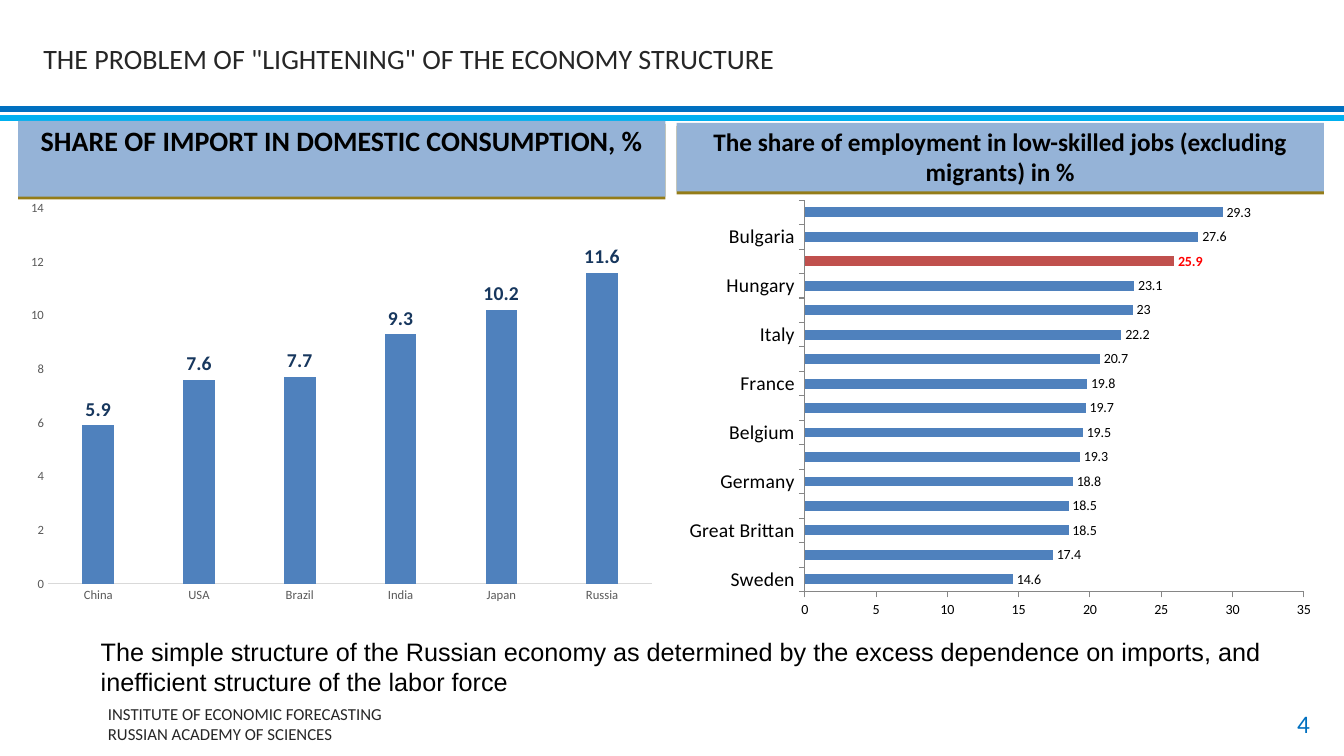
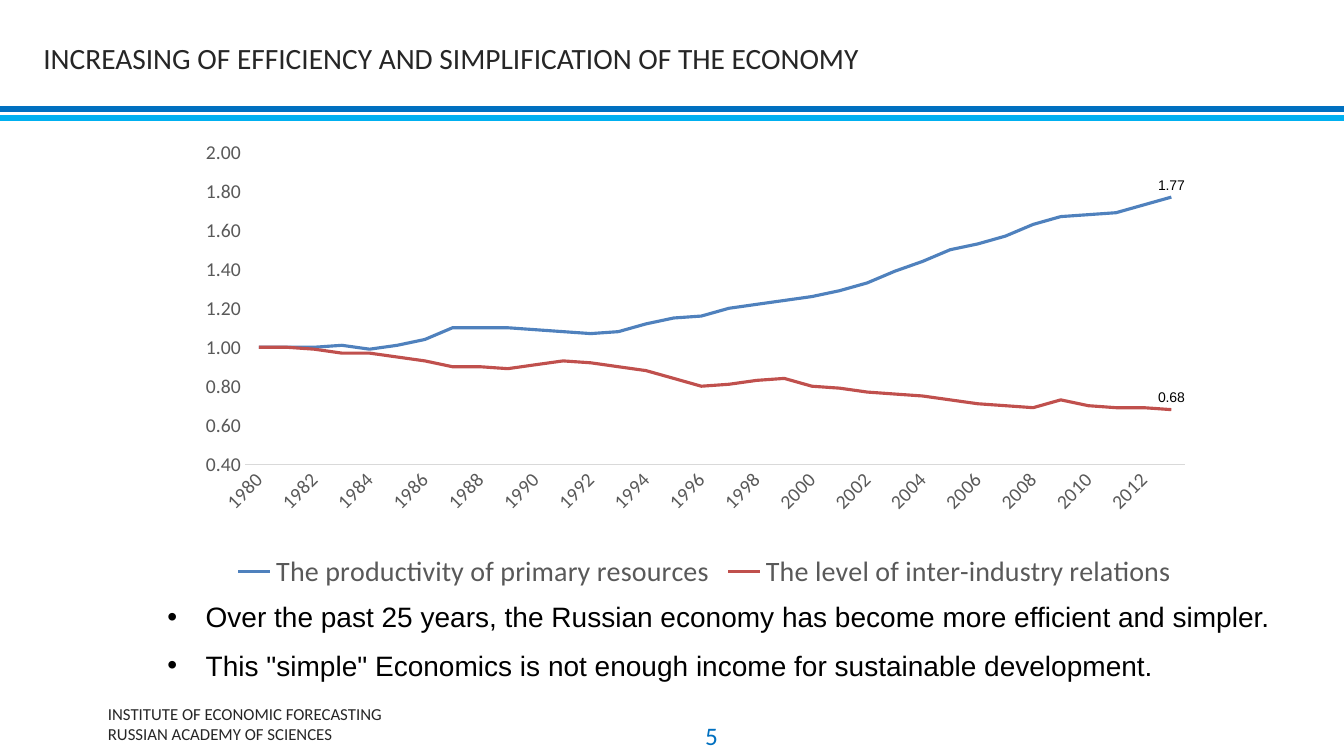
from pptx import Presentation
from pptx.chart.data import CategoryChartData
from pptx.dml.color import RGBColor
from pptx.enum.chart import XL_CHART_TYPE as Chart, XL_LABEL_POSITION as LabelAt
from pptx.enum.chart import XL_LEGEND_POSITION as LegendAt, XL_TICK_MARK as Tick
from pptx.enum.shapes import MSO_CONNECTOR as Connector, MSO_SHAPE as Shape
from pptx.enum.text import MSO_ANCHOR as Anchor, MSO_AUTO_SIZE as AutoSize, PP_ALIGN as Align
from pptx.oxml import parse_xml
from pptx.oxml.ns import nsdecls, qn
from pptx.util import Emu, Pt

# Shared look
PX = 9144  # 100 px to the inch
WIDTH, HEIGHT = 1333, 750
BLACK, INK, GREY, PALE = "000000", "262626", "595959", "D9D9D9"
BLUE, RED, NAVY, HOT = "4F81BD", "C0504D", "17375E", "FF0000"
BAND, GOLD, AXIS, NUMBER = "95B3D7", "947C18", "868686", "0070C0"
RULES = [(108, "0070C0"), (117, "00B0F0")]
FOOTER = ["INSTITUTE OF ECONOMIC FORECASTING", "RUSSIAN ACADEMY OF SCIENCES"]

# Slide 4 content
STRUCTURE_TITLE = 'THE PROBLEM OF "LIGHTENING" OF THE ECONOMY STRUCTURE'
HEADINGS = [
    ("SHARE OF IMPORT IN DOMESTIC CONSUMPTION, %", (18, 120, 642, 75), 20),
    ("The share of employment in low-skilled jobs (excluding migrants) in %",
     (671, 122, 642, 68), 18),
]
IMPORT_SHARE = {"China": 5.9, "USA": 7.6, "Brazil": 7.7, "India": 9.3,
                "Japan": 10.2, "Russia": 11.6}
LOW_SKILLED = {
    "Sweden": 14.6, "Finland": 17.4, "Great Brittan": 18.5, "Czech Rep.": 18.5,
    "Germany": 18.8, "Austria": 19.3, "Belgium": 19.5, "Netherlands": 19.7,
    "France": 19.8, "Poland": 20.7, "Italy": 22.2, "Romania": 23,
    "Hungary": 23.1, "Russia": 25.9, "Bulgaria": 27.6, "Turkey": 29.3,
}
CONCLUSION = ("The simple structure of the Russian economy as determined by the excess "
              "dependence on imports, and inefficient structure of the labor force")

# Slide 5 content
EFFICIENCY_TITLE = "INCREASING OF EFFICIENCY AND SIMPLIFICATION OF THE ECONOMY"
YEARS = [str(year) for year in range(1980, 2014)]
TRENDS = {
    "The productivity of primary resources": [
        1, 1, 1, 1.01, 0.99, 1.01, 1.04, 1.1, 1.1, 1.1, 1.09, 1.08, 1.07, 1.08, 1.12,
        1.15, 1.16, 1.2, 1.22, 1.24, 1.26, 1.29, 1.33, 1.39, 1.44, 1.5, 1.53, 1.57,
        1.63, 1.67, 1.68, 1.69, 1.73, 1.77],
    "The level of inter-industry relations": [
        1, 1, 0.99, 0.97, 0.97, 0.95, 0.93, 0.9, 0.9, 0.89, 0.91, 0.93, 0.92, 0.9, 0.88,
        0.84, 0.8, 0.81, 0.83, 0.84, 0.8, 0.79, 0.77, 0.76, 0.75, 0.73, 0.71, 0.7,
        0.69, 0.73, 0.7, 0.69, 0.69, 0.68],
}
FINDINGS = [
    "Over the past 25 years, the Russian economy has become more efficient and simpler.",
    'This "simple" Economics is not enough income for sustainable development.',
]
TREND_PLOT = {"x": 0.06, "y": 0.05, "w": 0.9, "h": 0.67}


def px(*lengths):
    return [Emu(length * PX) for length in lengths]


def rgb(code):
    return RGBColor.from_string(code)


def style(font, size, color=BLACK, bold=False, face="Calibri"):
    font.size, font.bold, font.name = Pt(size), bold, face
    font.color.rgb = rgb(color)


def write(shape, lines, *, size, color=BLACK, bold=False, face="Calibri", align=Align.LEFT,
          anchor=Anchor.TOP, insets=(10, 5, 10, 5), gap=0, hang=0):
    frame = shape.text_frame
    frame.auto_size, frame.word_wrap = AutoSize.NONE, True
    frame.vertical_anchor = anchor
    (frame.margin_left, frame.margin_top,
     frame.margin_right, frame.margin_bottom) = px(*insets)
    for index, line in enumerate(lines):
        paragraph = frame.paragraphs[0] if index == 0 else frame.add_paragraph()
        paragraph.alignment = align
        paragraph.space_before = Pt(gap if index else 0)
        if hang:
            properties = paragraph._p.get_or_add_pPr()
            properties.set("marL", str(hang * PX))
            properties.set("indent", str(-hang * PX))
            bullet = parse_xml(f'<a:buChar {nsdecls("a")} char="•"/>')
            properties.append(bullet)
        run = paragraph.add_run()
        run.text = line
        style(run.font, size, color, bold, face)


def place(shape, box):
    shape.left, shape.top, shape.width, shape.height = px(*box)
    return shape


def text_box(slide, box, lines, **text_format):
    write(slide.shapes.add_textbox(*px(*box)), lines, **text_format)


def start_slide(deck, layout, title, title_size, number, number_box):
    slide = deck.slides.add_slide(deck.slide_layouts[layout])
    for y, color in RULES:
        rule = slide.shapes.add_connector(Connector.STRAIGHT, *px(0, y, WIDTH, y))
        rule.line.color.rgb, rule.line.width = rgb(color), Pt(4)
        rule._element.spPr.append(parse_xml(f'<a:effectLst {nsdecls("a")}/>'))
    write(place(slide.shapes.title, (33, 35, 900, 45)), [title],
          size=title_size, color=INK, anchor=Anchor.MIDDLE)
    text_box(slide, (107, 698, 431, 40), FOOTER, size=12, color=INK,
             anchor=Anchor.MIDDLE, insets=(0, 0, 0, 0))
    text_box(slide, number_box, [number], size=18, color=NUMBER,
             align=Align.RIGHT, anchor=Anchor.MIDDLE)
    return slide


def add_heading(slide, heading, box, size):
    band = slide.shapes.add_shape(Shape.RECTANGLE, *px(*box))
    band.fill.solid()
    band.fill.fore_color.rgb = rgb(BAND)
    band.line.fill.background()
    # Gold edge under the band
    band._element.spPr.append(parse_xml(
        f'<a:effectLst {nsdecls("a")}><a:outerShdw blurRad="0" dist="{Pt(2)}" dir="5400000" '
        f'algn="ctr" rotWithShape="0"><a:srgbClr val="{GOLD}"/></a:outerShdw></a:effectLst>'))
    write(band, [heading], size=size, bold=True, align=Align.CENTER, insets=(8, 3, 8, 5))


def add_chart(slide, kind, box, categories, series, number_format="General"):
    data = CategoryChartData(number_format=number_format)
    data.categories = categories
    for name, values in series.items():
        data.add_series(name, values)
    chart = slide.shapes.add_chart(kind, *px(*box), data).chart
    chart.has_title = chart.has_legend = False
    style(chart.font, 10)
    return chart


def format_axis(axis, size, color=GREY, line=None, tick=Tick.NONE, scale=None):
    axis.has_major_gridlines = False
    axis.major_tick_mark, axis.minor_tick_mark = tick, Tick.NONE
    style(axis.tick_labels.font, size, color)
    if line:
        axis.format.line.color.rgb, axis.format.line.width = rgb(line), Pt(0.75)
    else:
        axis.format.line.fill.background()
    if scale:
        axis.minimum_scale, axis.maximum_scale, axis.major_unit = scale


def format_bars(chart, gap, overlap, **label_format):
    plot = chart.plots[0]
    plot.gap_width, plot.overlap, plot.vary_by_categories = gap, overlap, False
    bars = plot.series[0]
    bars.format.fill.solid()
    bars.format.fill.fore_color.rgb = rgb(BLUE)
    labels = bars.data_labels
    labels.show_value, labels.position = True, LabelAt.OUTSIDE_END
    style(labels.font, **label_format)
    return bars


def build_structure(deck):
    slide = start_slide(deck, 5, STRUCTURE_TITLE, 20, "4", (1009, 698, 300, 40))
    for heading in HEADINGS:
        add_heading(slide, *heading)
    text_box(slide, (90, 626, 1218, 71), [CONCLUSION], size=18, face="Arial")

    # Employment by country, Russia picked out
    jobs = add_chart(slide, Chart.BAR_CLUSTERED, (671, 190, 642, 431), list(LOW_SKILLED),
                     {"Low-skilled jobs": LOW_SKILLED.values()})
    format_axis(jobs.category_axis, 14, BLACK, AXIS, Tick.OUTSIDE)
    format_axis(jobs.value_axis, 10, BLACK, AXIS, Tick.OUTSIDE, (0, 35, 5))
    russia = format_bars(jobs, 150, 0, size=10).points[list(LOW_SKILLED).index("Russia")]
    russia.format.fill.solid()
    russia.format.fill.fore_color.rgb = rgb(RED)
    style(russia.data_label.font, 10, HOT, True)
    russia.data_label.position = LabelAt.OUTSIDE_END

    # Import share by country
    imports = add_chart(slide, Chart.COLUMN_CLUSTERED, (18, 191, 642, 415),
                        list(IMPORT_SHARE), {"Import share": IMPORT_SHARE.values()})
    format_axis(imports.category_axis, 9, line=PALE)
    format_axis(imports.value_axis, 9, scale=(0, 14, 2))
    format_bars(imports, 219, -27, size=14, color=NAVY, bold=True)


def build_efficiency(deck):
    slide = start_slide(deck, 1, EFFICIENCY_TITLE, 21, "5", (661, 710, 61, 40))
    trends = add_chart(slide, Chart.LINE, (181, 128, 1036, 462), YEARS, TRENDS, "0.00")
    format_axis(trends.category_axis, 14, line=PALE)
    format_axis(trends.value_axis, 14, scale=(0.4, 2, 0.2))
    trends.value_axis.tick_labels.number_format = "0.00"
    trends.value_axis.tick_labels.number_format_is_linked = False
    year_text = trends.category_axis._element.find(qn("c:txPr"))
    year_text.find(qn("a:bodyPr")).set("rot", "-2700000")

    # Lines, each labelled at its last year
    for line, color in zip(trends.plots[0].series, (BLUE, RED)):
        line.smooth = False
        line.format.line.color.rgb, line.format.line.width = rgb(color), Pt(2.25)
        last = line.points[len(YEARS) - 1].data_label
        style(last.font, 10, face="Arial")
        last.position = LabelAt.ABOVE

    trends.has_legend = True
    trends.legend.position, trends.legend.include_in_layout = LegendAt.BOTTOM, False
    style(trends.legend.font, 20, GREY)

    # Fixed inner plot area
    plot_area = trends._chartSpace.chart.plotArea
    for layout in plot_area.findall(qn("c:layout")):
        plot_area.remove(layout)
    modes = "".join(f'<c:{side}Mode val="edge"/>' for side in "xy")
    sizes = "".join(f'<c:{side} val="{part}"/>' for side, part in TREND_PLOT.items())
    plot_area.insert(0, parse_xml(
        f'<c:layout {nsdecls("c")}><c:manualLayout><c:layoutTarget val="inner"/>'
        f'{modes}{sizes}</c:manualLayout></c:layout>'))

    write(place(slide.placeholders[1], (156, 590, 1121, 91)), FINDINGS,
          size=20, face="Arial", gap=10.5, hang=38)


def main():
    deck = Presentation()
    deck.slide_width, deck.slide_height = px(WIDTH, HEIGHT)
    build_structure(deck)
    build_efficiency(deck)
    deck.save("out.pptx")


if __name__ == "__main__":
    main()
